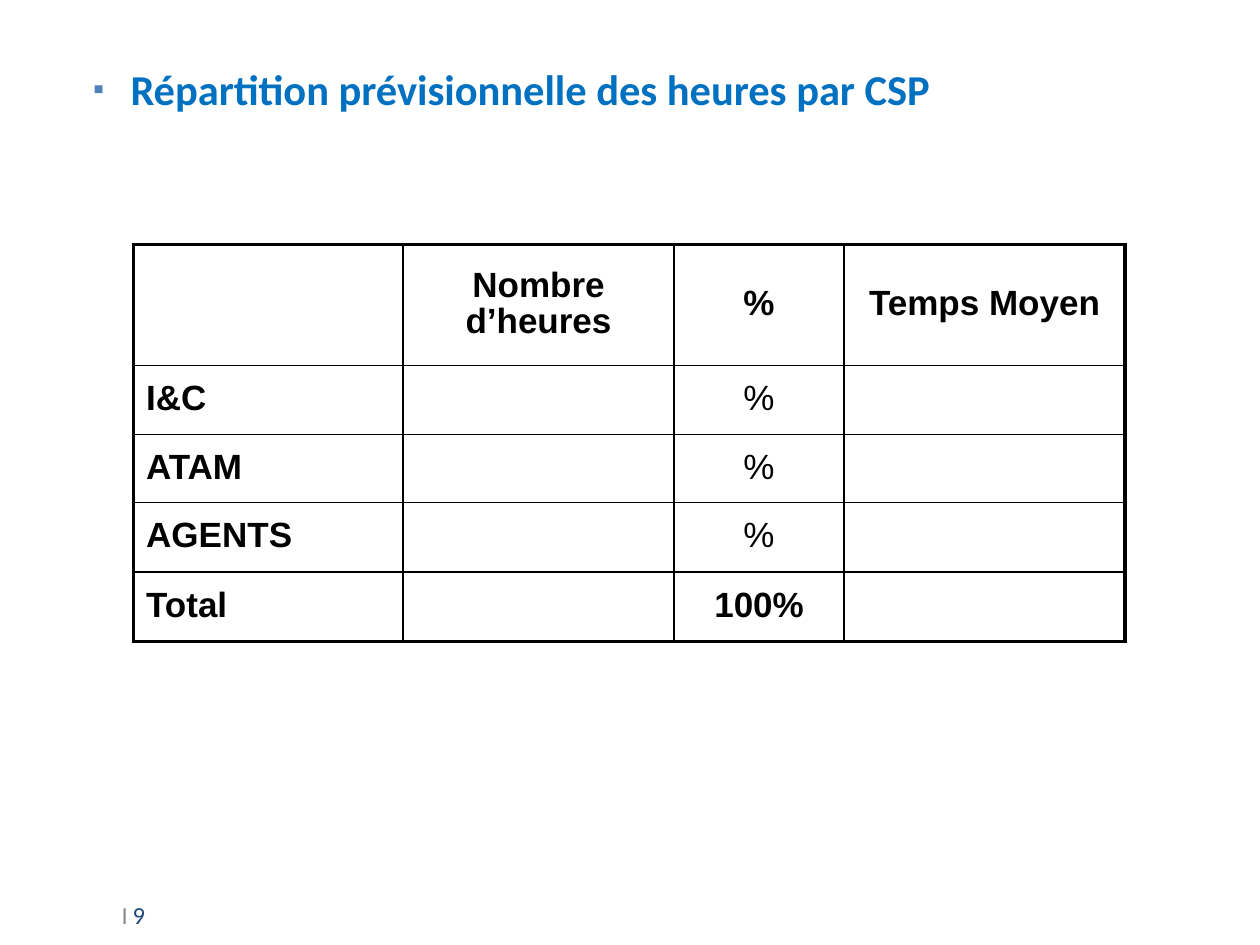
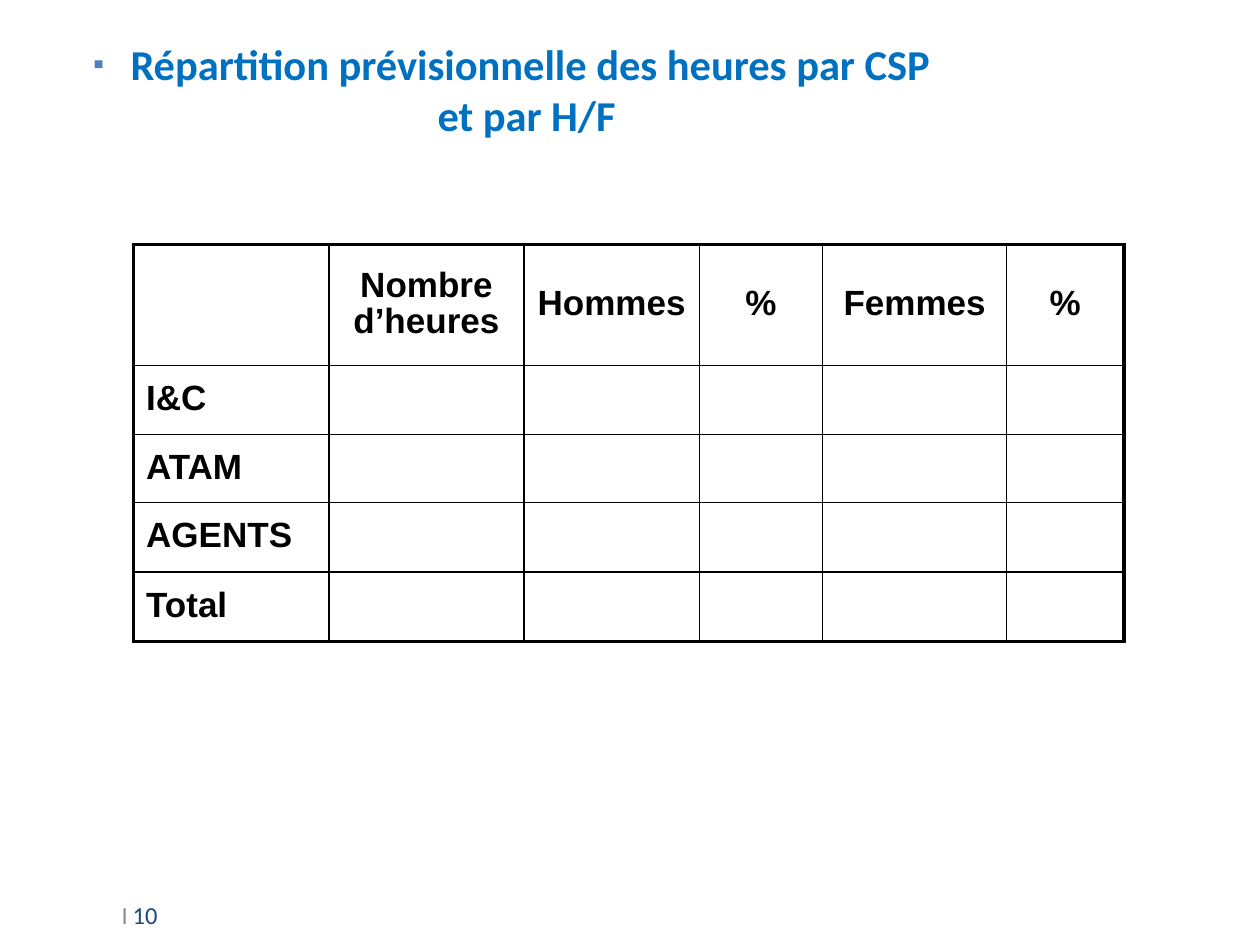
from lxml import etree
from pptx import Presentation, util as u
from pptx.dml.color import RGBColor
from pptx.enum import text
from pptx.oxml import ns

BLACK, BLUE, NAVY, GREY, BULLET = "000000", "0070C0", "1F497D", "8C8C8C", "4F81BD"
FOOTER_SIZE = 14
ROW_HEIGHTS = [0.96, 0.55, 0.54, 0.55, 0.55]
THIN, THICK = 1, 2.25
CELL_FORMAT = {
    "vertical_anchor": text.MSO_ANCHOR.MIDDLE,
    "margin_left": u.Inches(0.1), "margin_right": u.Inches(0.1),
    "margin_top": u.Inches(0.05), "margin_bottom": u.Inches(0.05),
}

PAGES = [
    {
        "number": "9",
        "title": "Répartition prévisionnelle des heures par CSP",
        "widths": [2.14, 2.15, 1.35, 2.23],
        "rows": [
            ["", "Nombre d’heures", "%", "Temps Moyen"],
            ["I&C", "", "%", ""],
            ["ATAM", "", "%", ""],
            ["AGENTS", "", "%", ""],
            ["Total", "", "100%", ""],
        ],
    },
    {
        "number": "10",
        "title": "Répartition prévisionnelle des heures par CSP et par H/F",
        "widths": [1.55, 1.55, 1.39, 0.98, 1.46, 0.93],
        "rows": [
            ["", "Nombre d’heures", "Hommes", "%", "Femmes", "%"],
            ["I&C"] + [""] * 5,
            ["ATAM"] + [""] * 5,
            ["AGENTS"] + [""] * 5,
            ["Total"] + [""] * 5,
        ],
    },
]


def add_span(para, words, size, color, font="Calibri", bold=False):
    span = para.add_run()
    span.text = words
    for name, value in {"size": u.Pt(size), "name": font, "bold": bold}.items():
        setattr(span.font, name, value)
    span.font.color.rgb = RGBColor.from_string(color)


def add_text_box(page, left, top, width, height):
    box = page.shapes.add_textbox(*[u.Inches(n) for n in (left, top, width, height)])
    box.text_frame.word_wrap = True
    box.text_frame.vertical_anchor = text.MSO_ANCHOR.MIDDLE
    return box.text_frame.paragraphs[0]


deck = Presentation()
deck.slide_width, deck.slide_height = u.Inches(10), u.Inches(7.5)

for content in PAGES:
    page = deck.slides.add_slide(deck.slide_layouts[6])

    # Page number
    para = add_text_box(page, 0.83, 7, 1, 0.52)
    add_span(para, " ", 12, GREY)
    add_span(para, "I", FOOTER_SIZE, GREY)
    add_span(para, " ", 12, GREY)
    add_span(para, content["number"], FOOTER_SIZE, NAVY)

    # Title with its square bullet
    para = add_text_box(page, 0.59, 0.52, 6.94, 0.37)
    para.alignment = text.PP_ALIGN.CENTER
    settings = para._p.get_or_add_pPr()
    settings.set("marL", str(u.Inches(0.24)))
    settings.set("indent", str(-u.Inches(0.24)))
    bullet_color = etree.SubElement(settings, ns.qn("a:buClr"))
    etree.SubElement(bullet_color, ns.qn("a:srgbClr"), val=BULLET)
    etree.SubElement(settings, ns.qn("a:buFont"), typeface="Arial")
    etree.SubElement(settings, ns.qn("a:buChar"), char="▪")
    add_span(para, " ", 18, BLACK)
    add_span(para, content["title"], 24.3, BLUE, bold=True)

    # Table of hours
    rows, widths = content["rows"], content["widths"]
    last_row, last_column = len(rows) - 1, len(widths) - 1
    frame = page.shapes.add_table(len(rows), len(widths), u.Inches(1.06), u.Inches(1.94),
                                  u.Inches(sum(widths)), u.Inches(sum(ROW_HEIGHTS)))
    table = frame.table
    table.first_row = table.horz_banding = False
    for column, width in zip(table.columns, widths):
        column.width = u.Inches(width)
    for row, height in zip(table.rows, ROW_HEIGHTS):
        row.height = u.Inches(height)

    for r, row in enumerate(rows):
        for c, words in enumerate(row):
            cell = table.cell(r, c)
            for name, value in CELL_FORMAT.items():
                setattr(cell, name, value)

            # Thick lines around the table, thin lines inside
            outer_sides = {"L": c == 0, "R": c == last_column, "T": r == 0, "B": r == last_row}
            for side, outer in outer_sides.items():
                line = etree.SubElement(cell._tc.get_or_add_tcPr(), ns.qn("a:ln" + side),
                                        w=str(u.Pt(THICK if outer else THIN)))
                fill = etree.SubElement(line, ns.qn("a:solidFill"))
                etree.SubElement(fill, ns.qn("a:srgbClr"), val=BLACK)
            cell.fill.background()

            # Only the plain percent signs of the body are not bold
            if words:
                para = cell.text_frame.paragraphs[0]
                para.line_spacing = 0.9
                para.alignment = text.PP_ALIGN.CENTER if c else text.PP_ALIGN.LEFT
                add_span(para, words, 20, BLACK, "Arial", bold=r == 0 or words != "%")

deck.save("out.pptx")
